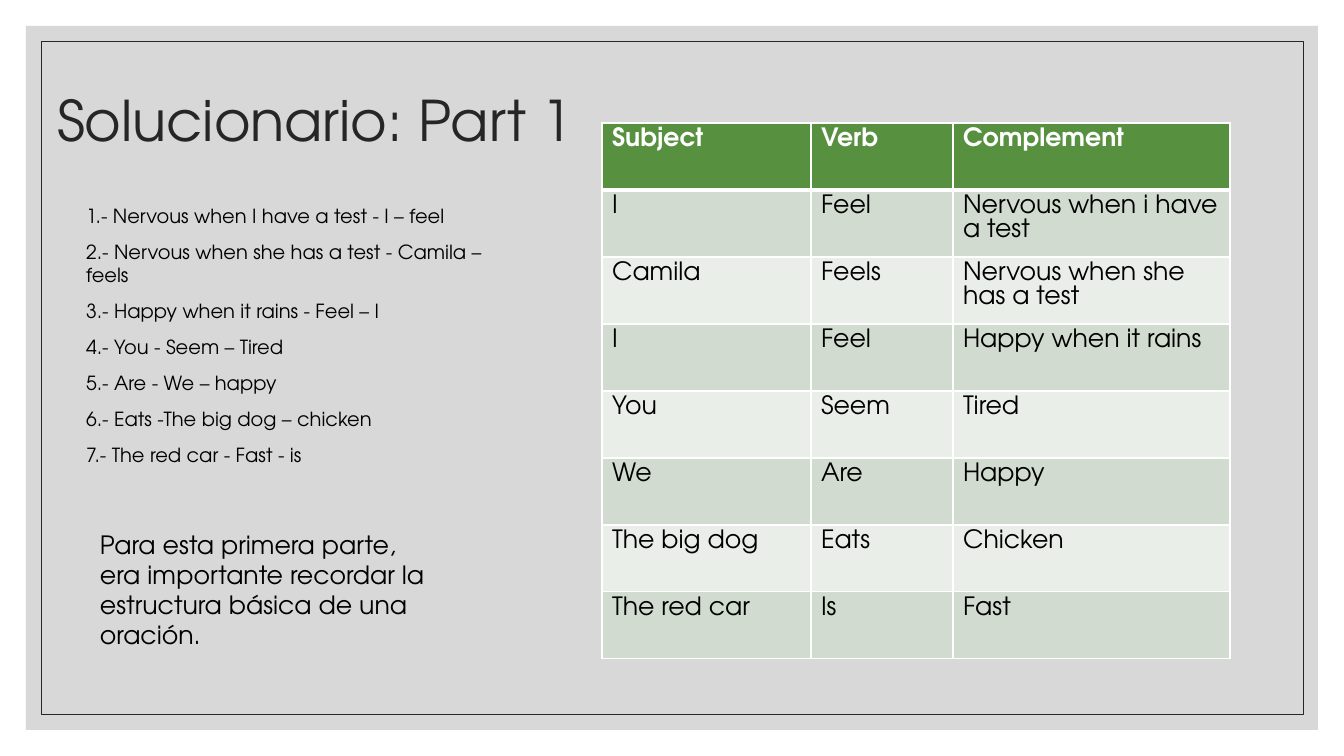
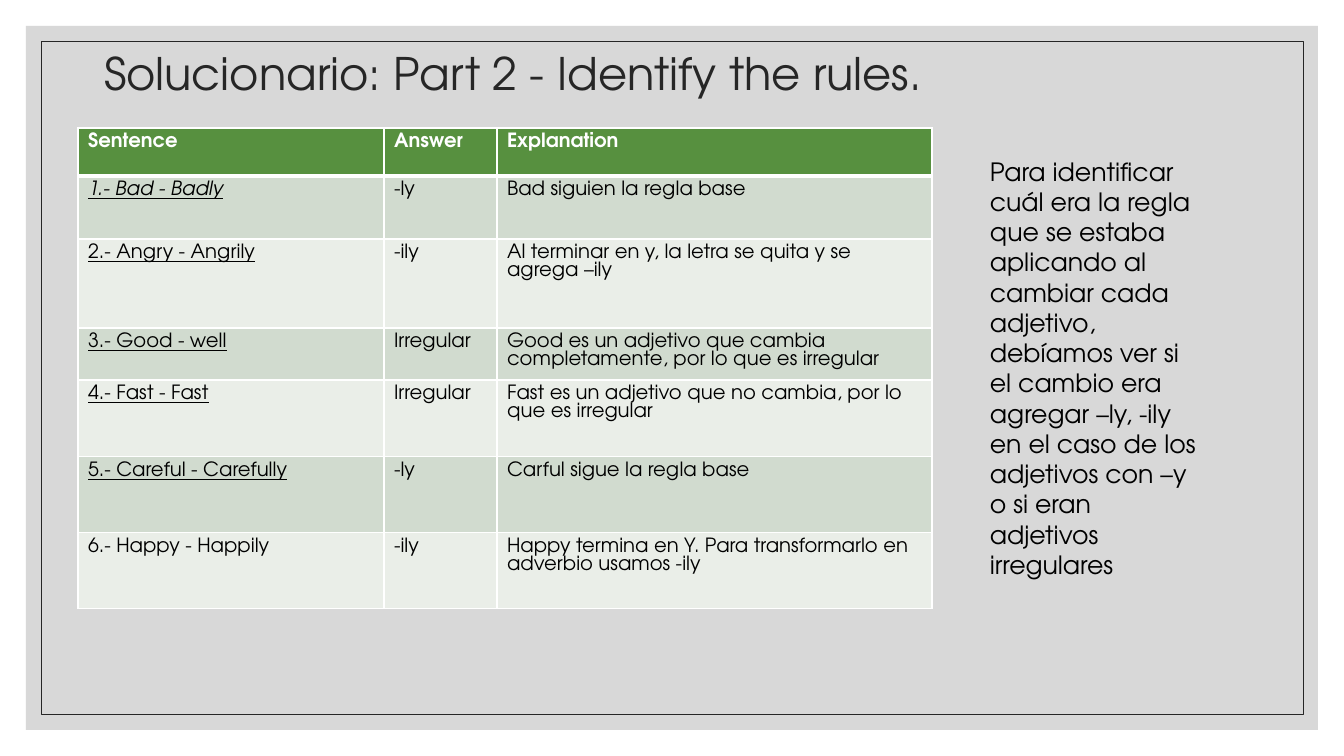
"""Builds two answer-key slides with a framed background, tables and notes."""
from lxml.etree import SubElement
from pptx import Presentation
from pptx.dml.color import RGBColor
from pptx.enum.shapes import MSO_SHAPE as Preset
from pptx.enum.text import MSO_ANCHOR as Anchor, MSO_AUTO_SIZE as AutoSize, PP_ALIGN as Align
from pptx.oxml import parse_xml
from pptx.oxml.ns import nsdecls, qn
from pptx.util import Emu, Pt

FONT = "TeX Gyre Adventor"
COLORS = {
    "panel": "BFBFBF",
    "title": "262626",
    "text": "000000",
    "header": "57903F",
    "odd_row": "D1DBCF",
    "even_row": "EAEEE8",
    "white": "FFFFFF",
}

EXERCISES = [
    "1.- Nervous when I have a test - I – feel",
    "2.- Nervous when she has a test - Camila – feels",
    "3.- Happy when it rains - Feel – I",
    "4.- You - Seem – Tired",
    "5.- Are - We – happy",
    "6.- Eats -The big dog – chicken",
    "7.- The red car - Fast - is",
]
STRUCTURE_NOTE = (
    "Para esta primera parte, era importante recordar la estructura básica de una oración."
)
STRUCTURE_ROWS = [
    ("Subject", "Verb", "Complement"),
    ("I", "Feel", "Nervous when i have a test"),
    ("Camila", "Feels", "Nervous when she has a test"),
    ("I", "Feel", "Happy when it rains"),
    ("You", "Seem", "Tired"),
    ("We", "Are", "Happy"),
    ("The big dog", "Eats", "Chicken"),
    ("The red car", "Is", "Fast"),
]
RULES_NOTE = (
    "Para identificar cuál era la regla que se estaba aplicando al cambiar cada adjetivo, "
    "debíamos ver si el cambio era agregar –ly, -ily en el caso de los adjetivos con –y "
    "o si eran adjetivos irregulares"
)
RULES_ROWS = [
    ("Sentence", "Answer", "Explanation"),
    ("1.- Bad - Badly", "-ly", "Bad siguien la regla base"),
    ("2.- Angry - Angrily", "-ily", "Al terminar en y, la letra se quita y se agrega –ily"),
    ("3.- Good - well", "Irregular",
     "Good es un adjetivo que cambia completamente, por lo que es irregular"),
    ("4.- Fast - Fast", "Irregular",
     "Fast es un adjetivo que no cambia, por lo que es irregular"),
    ("5.- Careful - Carefully", "-ly", "Carful sigue la regla base"),
    ("6.- Happy - Happily", "-ily",
     "Happy termina en Y. Para transformarlo en adverbio usamos -ily"),
]


def px(length):
    return Emu(round(length * 914400 / 100.8))


def color(name):
    return RGBColor.from_string(COLORS[name])


def place(shape, box):
    shape.left, shape.top, shape.width, shape.height = map(px, box)


def format_text(text_frame, size, color_name="text", bold=False, line_spacing=1.0):
    for paragraph in text_frame.paragraphs:
        paragraph.alignment = Align.LEFT
        paragraph.line_spacing = line_spacing
        for run in paragraph.runs:
            run.font.name = FONT
            run.font.size = Pt(size)
            run.font.bold = bold
            run.font.color.rgb = color(color_name)


def add_frame(slide, box):
    shape = slide.shapes.add_shape(Preset.RECTANGLE, *map(px, box))
    shape.shadow.inherit = False
    return shape


def add_master_frames(master, slide):
    panel = add_frame(slide, (26, 26, 1292, 704))
    panel.fill.solid()
    panel.fill.fore_color.rgb = color("panel")
    fill_color = panel.element.spPr.find(qn("a:solidFill"))[0]
    SubElement(fill_color, qn("a:alpha"), val="60000")
    panel.line.fill.background()

    outline = add_frame(slide, (41, 41, 1262, 673))
    outline.fill.background()
    outline.line.color.rgb = color("title")
    outline.line.width = Pt(0.5)

    for order, shape in enumerate((panel, outline)):
        shape.element.nvSpPr.cNvPr.set("id", str(20 + order))
        master.shapes.element.insert(2 + order, shape.element)


def set_title(slide, text, box, size):
    title = slide.shapes.title
    place(title, box)
    text_frame = title.text_frame
    text_frame.text = text
    text_frame.vertical_anchor = Anchor.MIDDLE
    text_frame.auto_size = AutoSize.NONE
    format_text(text_frame, size, "title", line_spacing=0.9)


def set_list(slide, items, box):
    body = slide.placeholders[1]
    place(body, box)
    text_frame = body.text_frame
    text_frame.text = "\n".join(items)
    text_frame.auto_size = AutoSize.NONE
    format_text(text_frame, 13.9)
    for paragraph in text_frame.paragraphs:
        paragraph.space_before = Pt(9)
        properties = paragraph._p.get_or_add_pPr()
        properties.set("marL", "0")
        properties.set("indent", "0")
        SubElement(properties, qn("a:buNone"))


def add_note(slide, text, box):
    text_frame = slide.shapes.add_textbox(*map(px, box)).text_frame
    text_frame.word_wrap = True
    text_frame.text = text
    format_text(text_frame, 18)


def set_borders(cell, row_index):
    widths = {
        "L": 1,
        "R": 1,
        "T": 3 if row_index == 1 else 1,
        "B": 3 if row_index == 0 else 1,
    }
    properties = cell._tc.get_or_add_tcPr()
    for order, (side, width) in enumerate(widths.items()):
        properties.insert(order, parse_xml(
            f'<a:ln{side} {nsdecls("a")} w="{Pt(width)}"><a:solidFill>'
            f'<a:srgbClr val="{COLORS["white"]}"/></a:solidFill></a:ln{side}>'))


def add_grid(slide, rows, corner, column_widths, row_heights, size):
    box = (*corner, sum(column_widths), sum(row_heights))
    table = slide.shapes.add_table(len(rows), len(column_widths), *map(px, box)).table
    for column, width in zip(table.columns, column_widths):
        column.width = px(width)
    for row_index, (texts, height) in enumerate(zip(rows, row_heights)):
        table.rows[row_index].height = px(height)
        is_header = row_index == 0
        fill_name = "header" if is_header else "odd_row" if row_index % 2 else "even_row"
        for column_index, text in enumerate(texts):
            cell = table.cell(row_index, column_index)
            cell.text = text
            cell.fill.solid()
            cell.fill.fore_color.rgb = color(fill_name)
            set_borders(cell, row_index)
            format_text(cell.text_frame, size, "white" if is_header else "text", is_header)
    return table


def underline_sentences(table, row_indexes):
    for row_index in row_indexes:
        font = table.cell(row_index, 0).text_frame.paragraphs[0].runs[0].font
        font.underline = True
        font.italic = row_index == 1


def build_structure_slide(slide):
    set_title(slide, "Solucionario: Part 1", (47, 48, 1109, 151), 40)
    set_list(slide, EXERCISES, (76, 199, 461, 302))
    add_grid(slide, STRUCTURE_ROWS, (602, 123), (209, 142, 277),
             [67] * len(STRUCTURE_ROWS), 18)
    add_note(slide, STRUCTURE_NOTE, (90, 524, 355, 132))


def build_rules_slide(slide):
    set_title(slide, "Solucionario: Part 2 - Identify the rules.", (94, 0, 1152, 151), 32)
    table = add_grid(slide, RULES_ROWS, (78, 128), (306, 113, 435),
                     (48, 63, 89, 52, 77, 76, 76), 14)
    underline_sentences(table, range(1, 6))
    add_note(slide, RULES_NOTE, (980, 151, 232, 437))


def main():
    presentation = Presentation()
    presentation.slide_width, presentation.slide_height = px(1344), px(756)
    layouts = presentation.slide_layouts
    structure_slide = presentation.slides.add_slide(layouts[1])
    add_master_frames(presentation.slide_master, structure_slide)
    build_structure_slide(structure_slide)
    build_rules_slide(presentation.slides.add_slide(layouts[5]))
    presentation.save("out.pptx")


if __name__ == "__main__":
    main()
